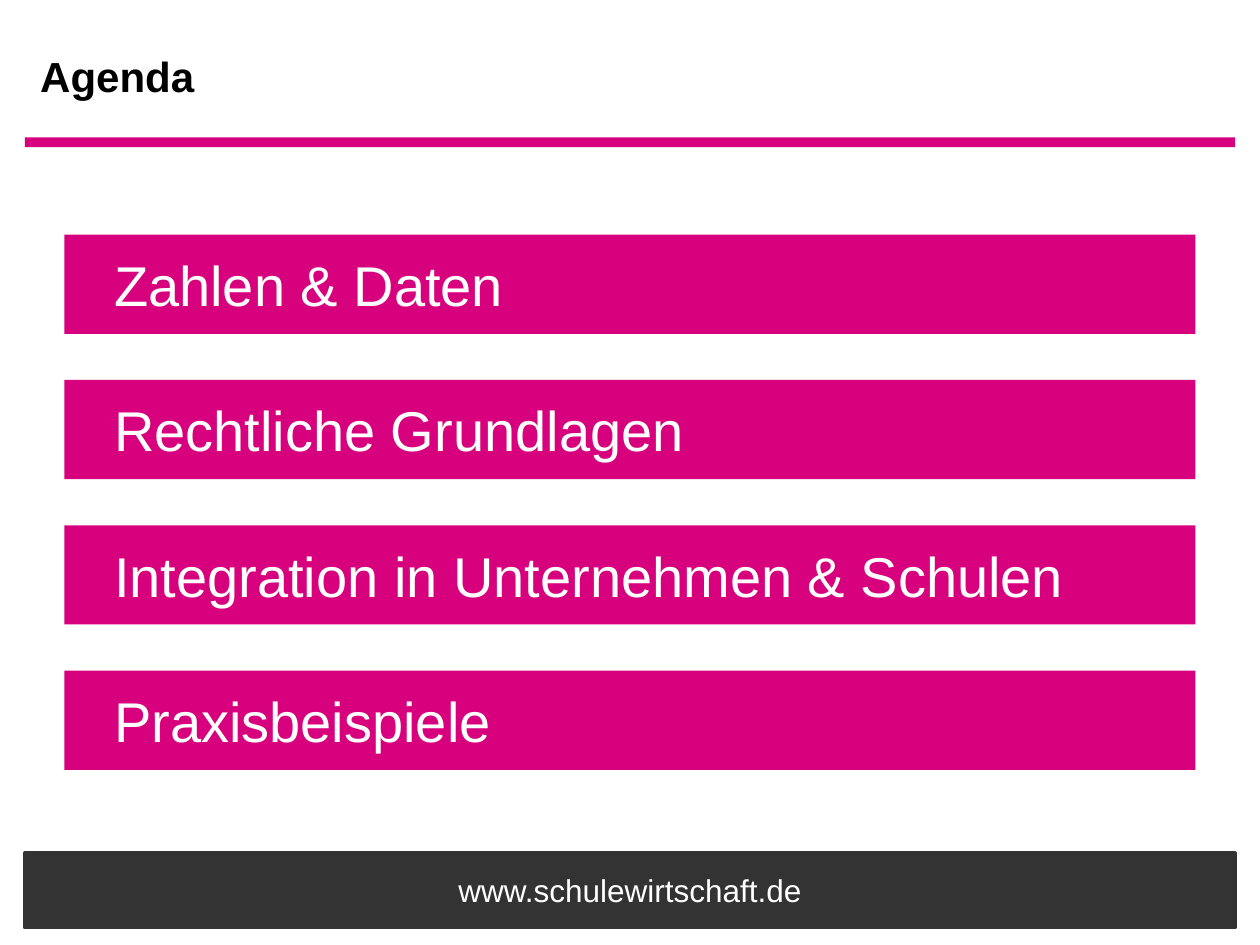
from dataclasses import dataclass

from lxml.etree import SubElement
from pptx import Presentation
from pptx.dml.color import RGBColor
from pptx.enum.shapes import MSO_SHAPE as Preset
from pptx.enum.text import MSO_ANCHOR as Anchor, MSO_AUTO_SIZE as AutoSize, PP_ALIGN as Align
from pptx.oxml.ns import qn
from pptx.shapes.base import BaseShape
from pptx.slide import Slide
from pptx.util import Cm, Pt

COLORS = {"magenta": "D7007D", "charcoal": "333333", "white": "FFFFFF", "black": "000000"}
FONT = "Arial"
COMPARISON_LAYOUT = 4  # title and four body placeholders
AGENDA = (
    "Zahlen & Daten",
    "Rechtliche Grundlagen",
    "Integration in Unternehmen & Schulen",
    "Praxisbeispiele",
)


@dataclass(frozen=True)
class Box:
    """Position and size in centimetres."""

    left: float
    top: float
    width: float
    height: float

    def below(self, distance: float) -> "Box":
        return Box(self.left, self.top + distance, self.width, self.height)


@dataclass(frozen=True)
class TextStyle:
    size: int
    color: str
    bold: bool = False
    align: Align = Align.LEFT
    inset: float = 0.25


FOOTER_BOX = Box(0.5, 17.2, 24.4, 1.5)
RULE_BOX = Box(0.5, 2.77, 24.4, 0.2)
TITLE_BOX = Box(0.56, 0.66, 15.0, 1.75)
FIRST_BAR = Box(1.3, 4.73, 22.8, 2.0)
BAR_PITCH = 2.93

TITLE_STYLE = TextStyle(24, "black", bold=True)
AGENDA_STYLE = TextStyle(32, "white", inset=1.0)
FOOTER_STYLE = TextStyle(18, "white", align=Align.CENTER)


def rgb(name: str) -> RGBColor:
    return RGBColor.from_string(COLORS[name])


def fill_shape(shape: BaseShape, color: str) -> None:
    shape.fill.solid()
    shape.fill.fore_color.rgb = rgb(color)


def place(shape: BaseShape, box: Box) -> None:
    shape.left, shape.top = Cm(box.left), Cm(box.top)
    shape.width, shape.height = Cm(box.width), Cm(box.height)


def add_band(slide: Slide, box: Box, color: str, outline: float = 0) -> BaseShape:
    band = slide.shapes.add_shape(
        Preset.RECTANGLE, Cm(box.left), Cm(box.top), Cm(box.width), Cm(box.height)
    )
    band.shadow.inherit = False
    fill_shape(band, color)
    if outline:
        band.line.color.rgb = rgb(color)
        band.line.width = Pt(outline)
    else:
        band.line.fill.background()
    return band


def write(shape: BaseShape, text: str, style: TextStyle) -> None:
    frame = shape.text_frame
    frame.word_wrap = True
    frame.auto_size = AutoSize.NONE
    frame.vertical_anchor = Anchor.MIDDLE
    frame.margin_left = Cm(style.inset)
    frame.margin_top = frame.margin_bottom = 0
    paragraph = frame.paragraphs[0]
    paragraph.alignment = style.align
    paragraph.space_before = Pt(0)
    run = paragraph.add_run()
    run.text = text
    run.font.name = FONT
    run.font.size = Pt(style.size)
    run.font.bold = style.bold
    run.font.color.rgb = rgb(style.color)


def remove_bullet(shape: BaseShape) -> None:
    properties = shape.text_frame.paragraphs[0]._p.get_or_add_pPr()
    properties.set("marL", "0")
    properties.set("indent", "0")
    SubElement(properties, qn("a:buNone"))


def build_slide(slide: Slide) -> None:
    footer = add_band(slide, FOOTER_BOX, "charcoal", outline=2)
    write(footer, "www.schulewirtschaft.de", FOOTER_STYLE)
    add_band(slide, RULE_BOX, "magenta")

    title, *bars = slide.placeholders
    place(title, TITLE_BOX)
    write(title, "Agenda", TITLE_STYLE)
    for index, (bar, topic) in enumerate(zip(bars, AGENDA)):
        place(bar, FIRST_BAR.below(index * BAR_PITCH))
        fill_shape(bar, "magenta")
        write(bar, topic, AGENDA_STYLE)
        remove_bullet(bar)


def main() -> None:
    presentation = Presentation()
    presentation.slide_width, presentation.slide_height = Cm(25.4), Cm(19.05)
    build_slide(presentation.slides.add_slide(presentation.slide_layouts[COMPARISON_LAYOUT]))
    presentation.save("out.pptx")


if __name__ == "__main__":
    main()
